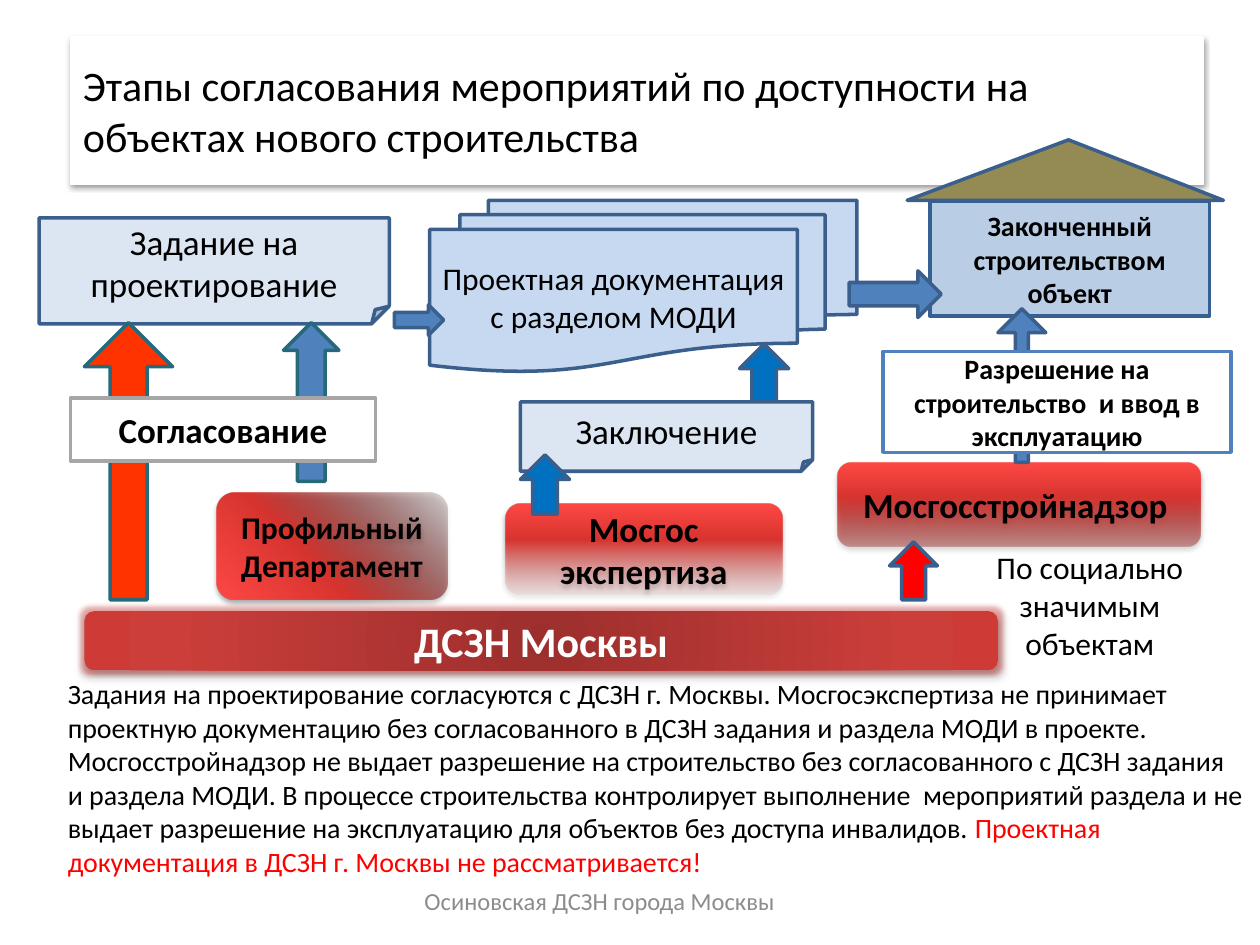
from dataclasses import dataclass

from lxml.etree import SubElement
from pptx import Presentation
from pptx.dml.color import RGBColor
from pptx.enum.shapes import MSO_SHAPE as Shape
from pptx.enum.text import MSO_ANCHOR as Anchor, MSO_AUTO_SIZE as AutoSize, PP_ALIGN as Align
from pptx.oxml.ns import qn
from pptx.util import Inches, Pt


@dataclass(frozen=True)
class Theme:
    """Colours and type sizes of the slide."""
    font: str = "Calibri"
    title: int = 24
    large: int = 20
    medium: int = 18
    small: int = 16
    footer: int = 14
    black: str = "000000"
    white: str = "FFFFFF"
    gray: str = "8C8C8C"
    border: str = "A6A6A6"
    red: str = "FF0000"
    orange: str = "FF3300"
    blue: str = "4F81BD"
    bright: str = "0070C0"
    outline: str = "3A5F8C"
    navy: str = "376092"
    teal: str = "26697A"
    pale: str = "DCE6F2"
    sky: str = "C6D9F1"
    wall: str = "B9CDE5"
    roof: str = "948A54"
    glow: str = "CE3B37"
    reds: tuple = ((60, "D8342F", 100), (100, "FF4945", 100))
    bar: tuple = ((0, "9C2F2D", 100), (80, "CB3E3A", 100), (100, "CE3B37", 100))


THEME = Theme()


def add_color(parent, color, alpha):
    """Append a colour with its opacity in percent."""
    node = SubElement(parent, qn("a:srgbClr"), val=color)
    if alpha < 100:
        SubElement(node, qn("a:alpha"), val=str(alpha * 1000))


def write_text(box, paragraphs, size, color=THEME.black, bold=False, align=Align.CENTER, anchor=Anchor.MIDDLE):
    """Write paragraphs in one style into a shape."""
    frame = box.text_frame
    frame.word_wrap = True
    frame.vertical_anchor = anchor
    for index, text in enumerate(paragraphs):
        para = frame.add_paragraph() if index else frame.paragraphs[0]
        para.text = text
        para.alignment = align
        para.font.name = THEME.font
        para.font.size = Pt(size)
        para.font.bold = bold
        para.font.color.rgb = RGBColor.from_string(color)


def add_figure(page, kind, place, fill=None, line=None, width=2, adjust=None):
    """Add a flat preset shape at a place given in inches."""
    figure = page.shapes.add_shape(kind, *map(Inches, place))
    figure.shadow.inherit = False
    if fill:
        figure.fill.solid()
        figure.fill.fore_color.rgb = RGBColor.from_string(fill)
    if line:
        figure.line.color.rgb = RGBColor.from_string(line)
        figure.line.width = Pt(width)
    else:
        figure.line.fill.background()
    if adjust:
        for index, value in enumerate(adjust):
            figure.adjustments[index] = value
    return figure


def add_shadow(figure, alpha, distance, glow=None):
    """Give a shape a soft shadow below and an optional glow."""
    effects = figure._element.spPr.find(qn("a:effectLst"))
    if glow:
        add_color(SubElement(effects, qn("a:glow"), rad=str(Pt(5))), glow, 40)
    shadow = SubElement(effects, qn("a:outerShdw"), blurRad=str(Pt(3.1)), dist=str(Pt(distance)),
                        dir="5400000", rotWithShape="0")
    add_color(shadow, THEME.black, alpha)


def add_agency(page, place, stops, angle, paragraphs, size, color=THEME.black, glow=None):
    """Add a rounded gradient box, radial when the angle is None."""
    figure = add_figure(page, Shape.ROUNDED_RECTANGLE, place)
    figure.fill.gradient()
    gradient = figure._element.spPr.find(qn("a:gradFill"))
    for child in list(gradient):
        gradient.remove(child)
    stop_list = SubElement(gradient, qn("a:gsLst"))
    for position, shade, alpha in stops:
        add_color(SubElement(stop_list, qn("a:gs"), pos=str(position * 1000)), shade, alpha)
    if angle is None:
        radial = SubElement(gradient, qn("a:path"), path="circle")
        SubElement(radial, qn("a:fillToRect"), l="50000", t="50000", r="50000", b="50000")
    else:
        SubElement(gradient, qn("a:lin"), ang=str(angle * 60000), scaled="0")
    add_shadow(figure, 35, 1.8, glow)
    write_text(figure, paragraphs, size, color, True)


def add_card(page, kind, place, fill, line, text, size, bold=False):
    """Add an outlined shape with a centred caption."""
    write_text(add_figure(page, kind, place, fill, line), [text], size, bold=bold)


def add_up_arrow(page, place, fill, line=THEME.outline, adjust=None):
    """Add a block arrow that points up."""
    add_figure(page, Shape.DOWN_ARROW, place, fill, line, adjust=adjust).rotation = 180


def add_label(page, place, text, size, **style):
    """Add a text box and return it."""
    box = page.shapes.add_textbox(*map(Inches, place))
    write_text(box, [text], size, **style)
    return box


def add_heading(page):
    """Add the title panel, the explanation and the footer."""
    title = add_figure(page, Shape.RECTANGLE, (0.56, 0.29, 8.99, 1.17), THEME.white, THEME.white, 0.75)
    add_shadow(title, 38, 1.6)
    write_text(title, ["Этапы согласования мероприятий по доступности на объектах нового строительства"],
               THEME.title, align=Align.LEFT)
    body = add_label(
        page, (0.44, 5.32, 9.53, 1.74),
        "Задания на проектирование согласуются с ДСЗН г. Москвы. Мосгосэкспертиза не принимает "
        "проектную документацию без согласованного в ДСЗН задания и раздела МОДИ в проекте. "
        "Мосгосстройнадзор не выдает разрешение на строительство без согласованного с ДСЗН задания "
        "и раздела МОДИ. В процессе строительства контролирует выполнение  мероприятий раздела и "
        "не выдает разрешение на эксплуатацию для объектов без доступа инвалидов. ",
        THEME.small, align=Align.LEFT, anchor=Anchor.TOP)
    span = body.text_frame.paragraphs[0].add_run()
    span.text = "Проектная документация в ДСЗН г. Москвы не рассматривается!"
    span.font.color.rgb = RGBColor.from_string(THEME.red)
    add_label(page, (2.93, 6.95, 3.66, 0.4), "Осиновская ДСЗН города Москвы", THEME.footer, color=THEME.gray)


def main():
    """Build the approval stages slide."""
    deck = Presentation()
    deck.slide_width, deck.slide_height = Inches(10), Inches(7.5)
    page = deck.slides.add_slide(deck.slide_layouts[6])

    add_card(page, Shape.FLOWCHART_MULTIDOCUMENT, (3.41, 1.59, 3.39, 1.36), THEME.sky, THEME.outline,
             "Проектная документация с разделом МОДИ", THEME.medium)
    add_card(page, Shape.FOLDED_CORNER, (0.31, 1.73, 2.78, 0.84), THEME.pale, THEME.outline,
             "Задание на проектирование", THEME.large)
    add_heading(page)
    add_card(page, Shape.RECTANGLE, (7.38, 1.6, 2.22, 0.91), THEME.wall, THEME.navy,
             "Законченный строительством объект", THEME.small, True)
    add_agency(page, (4.01, 4, 2.2, 0.72), ((0, "F0B6B5", 20), *THEME.reds), 270,
               ["Мосгос", "экспертиза"], THEME.large)
    add_agency(page, (6.65, 3.67, 2.88, 0.67), ((0, "9E2320", 41), *THEME.reds), 270,
               ["Мосгосстройнадзор "], THEME.large)
    add_up_arrow(page, (5.87, 2.73, 0.39, 0.47), THEME.bright)
    add_up_arrow(page, (7.92, 2.45, 0.38, 1.22), THEME.blue, adjust=(0.27, 0.5))
    for place in ((3.13, 2.42, 0.39, 0.24), (6.74, 2.15, 0.73, 0.37)):
        add_figure(page, Shape.RIGHT_ARROW, place, THEME.blue, THEME.outline)
    add_up_arrow(page, (0.67, 2.56, 0.7, 2.2), THEME.orange, THEME.teal, (0.42, 0.5))
    add_agency(page, (1.72, 3.91, 1.83, 0.85), ((0, "310B0A", 15), *THEME.reds), 135,
               ["Профильный Департамент"], THEME.medium)
    add_up_arrow(page, (2.25, 2.56, 0.44, 1.26), THEME.blue, THEME.teal)
    add_card(page, Shape.RECTANGLE, (0.56, 3.16, 2.42, 0.5), THEME.white, THEME.border,
             "Согласование", THEME.large, True)
    add_card(page, Shape.RECTANGLE, (7.01, 2.79, 2.76, 0.8), THEME.white, THEME.blue,
             "Разрешение на строительство  и ввод в эксплуатацию", THEME.small, True)
    add_card(page, Shape.FOLDED_CORNER, (4.13, 3.19, 2.32, 0.55), THEME.pale, THEME.outline,
             "Заключение", THEME.large)
    add_up_arrow(page, (4.13, 3.61, 0.39, 0.47), THEME.bright)
    add_figure(page, Shape.ISOSCELES_TRIANGLE, (7.2, 1.11, 2.51, 0.48), THEME.roof, THEME.outline, adjust=(0.51,))
    add_agency(page, (0.67, 4.85, 7.25, 0.47), THEME.bar, None, ["ДСЗН Москвы"],
               THEME.title, THEME.white, THEME.glow)
    add_up_arrow(page, (7.06, 4.3, 0.38, 0.46), THEME.red)
    note = add_label(page, (7.6, 4.3, 2.1, 1.01), "По социально значимым объектам", THEME.medium, anchor=Anchor.TOP)
    note.text_frame.auto_size = AutoSize.SHAPE_TO_FIT_TEXT
    deck.save("out.pptx")


if __name__ == "__main__":
    main()
